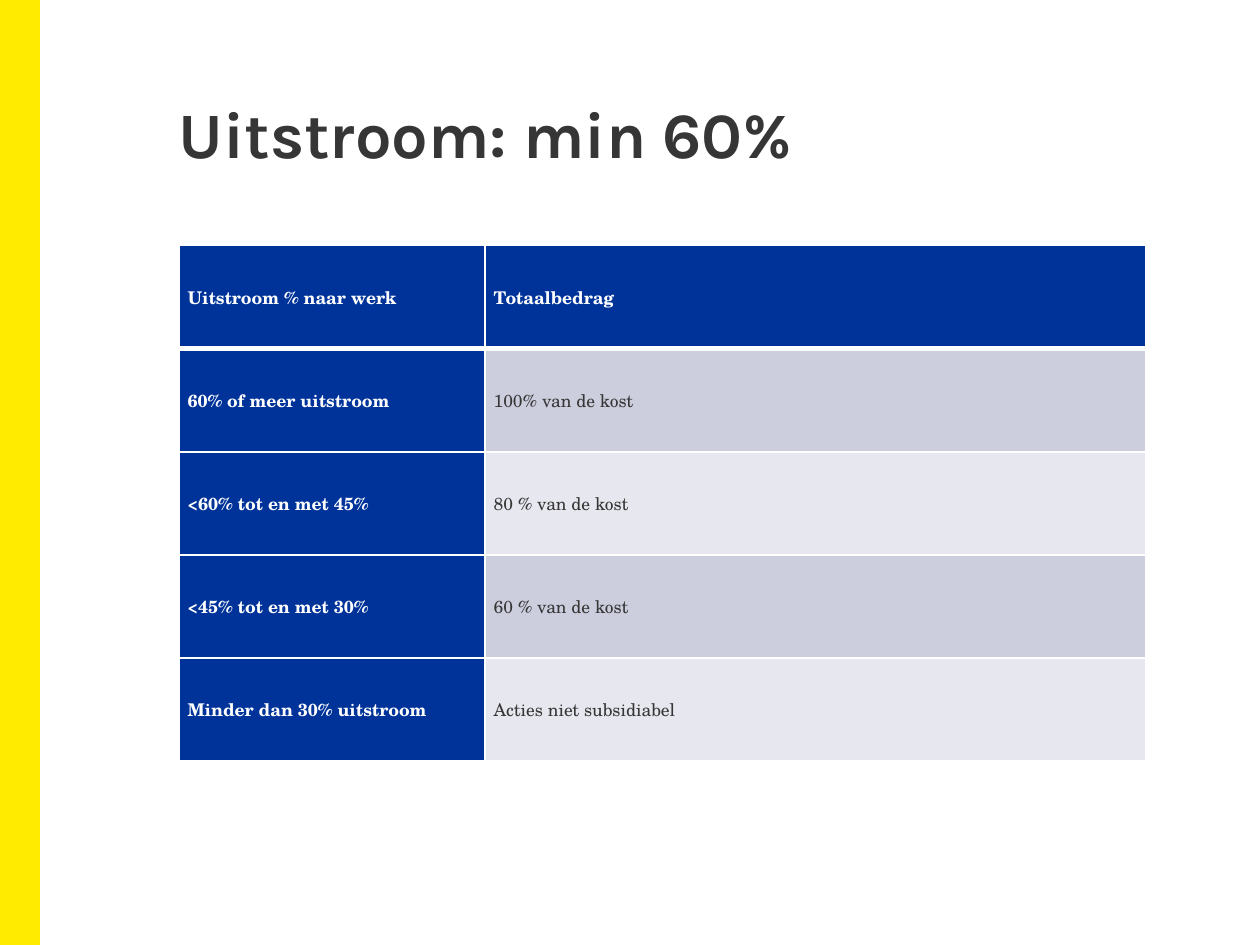
"""Build the slide with the outflow percentages and the matching amounts."""
from lxml.etree import SubElement
from pptx import Presentation
from pptx.dml.color import RGBColor
from pptx.enum.shapes import MSO_SHAPE
from pptx.enum.text import MSO_ANCHOR, PP_ALIGN
from pptx.oxml.ns import qn
from pptx.util import Pt

YELLOW = RGBColor(0xFF, 0xEB, 0x00)
BLUE = RGBColor(0x00, 0x33, 0x99)
WHITE = RGBColor(0xFF, 0xFF, 0xFF)
DARK = RGBColor(0x37, 0x36, 0x36)
BAND_DARK = RGBColor(0xCC, 0xCE, 0xDE)
BAND_LIGHT = RGBColor(0xE7, 0xE8, 0xEF)

ROWS = [
    ("Uitstroom % naar werk", "Totaalbedrag"),
    ("60% of meer uitstroom", "100% van de kost"),
    ("<60% tot en met 45%", "80 % van de kost"),
    ("<45% tot en met 30%", "60 % van de kost"),
    ("Minder dan 30% uitstroom", "Acties niet subsidiabel"),
]
COLUMN_WIDTHS = [174.9, 377.4]
ROW_HEIGHT = 58.9


def add_run(paragraph, text, font_name, size, color, bold):
    run = paragraph.add_run()
    run.text = text
    run.font.name = font_name
    run.font.size = Pt(size)
    run.font.color.rgb = color
    run.font.bold = bold


def add_border(cell, side, width):
    properties = cell._tc.get_or_add_tcPr()
    line = SubElement(properties, qn(f"a:ln{side}"), w=str(Pt(width)))
    fill = SubElement(line, qn("a:solidFill"))
    SubElement(fill, qn("a:srgbClr"), val=str(WHITE))


presentation = Presentation()
presentation.slide_width = Pt(720)
presentation.slide_height = Pt(540)
slide = presentation.slides.add_slide(presentation.slide_layouts[5])

side_bar = slide.shapes.add_shape(MSO_SHAPE.RECTANGLE, Pt(0), Pt(0), Pt(22.3), Pt(540))
side_bar.shadow.inherit = False
side_bar.fill.solid()
side_bar.fill.fore_color.rgb = YELLOW
side_bar.line.color.rgb = YELLOW
side_bar.line.width = Pt(1)

title = slide.shapes.title
title.left, title.top, title.width, title.height = Pt(102.2), Pt(59.8), Pt(584), Pt(87.8)
title_frame = title.text_frame
title_frame.margin_left = title_frame.margin_right = Pt(0)
title_frame.margin_top = title_frame.margin_bottom = Pt(0)
title_frame.vertical_anchor = MSO_ANCHOR.TOP
title_frame.word_wrap = True
title_paragraph = title_frame.paragraphs[0]
title_paragraph.alignment = PP_ALIGN.LEFT
title_paragraph.line_spacing = Pt(38)
add_run(title_paragraph, "Uitstroom: min 60%", "Karla", 37, DARK, True)

table = slide.shapes.add_table(
    len(ROWS), len(COLUMN_WIDTHS), Pt(102.2), Pt(140.4),
    Pt(sum(COLUMN_WIDTHS)), Pt(ROW_HEIGHT * len(ROWS)),
).table
for column, width in zip(table.columns, COLUMN_WIDTHS):
    column.width = Pt(width)

for row_index, texts in enumerate(ROWS):
    table.rows[row_index].height = Pt(ROW_HEIGHT)
    band = BAND_DARK if row_index % 2 else BAND_LIGHT
    for column_index, text in enumerate(texts):
        cell = table.cell(row_index, column_index)
        is_heading = row_index == 0 or column_index == 0
        add_border(cell, "L", 1)
        add_border(cell, "R", 1)
        add_border(cell, "T", 3 if row_index == 1 else 1)
        add_border(cell, "B", 3 if row_index == 0 else 1)
        cell.fill.solid()
        cell.fill.fore_color.rgb = BLUE if is_heading else band
        cell.vertical_anchor = MSO_ANCHOR.MIDDLE
        cell.margin_left = cell.margin_right = Pt(5)
        cell.margin_top = cell.margin_bottom = Pt(0)
        paragraph = cell.text_frame.paragraphs[0]
        paragraph.alignment = PP_ALIGN.JUSTIFY
        paragraph.space_after = Pt(10)
        color = WHITE if is_heading else DARK
        add_run(paragraph, text, "TeX Gyre Schola", 10, color, is_heading)

presentation.save("out.pptx")
